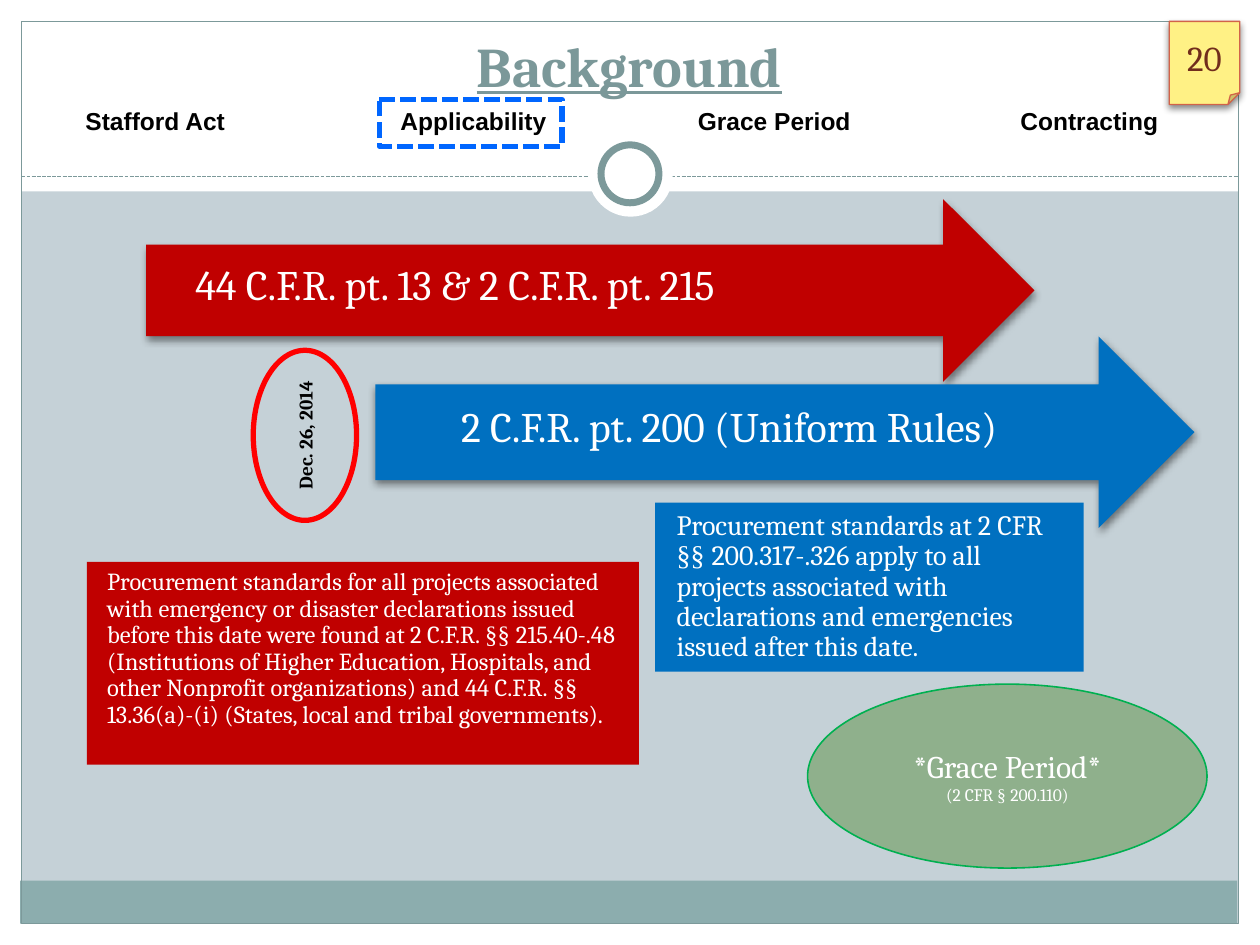
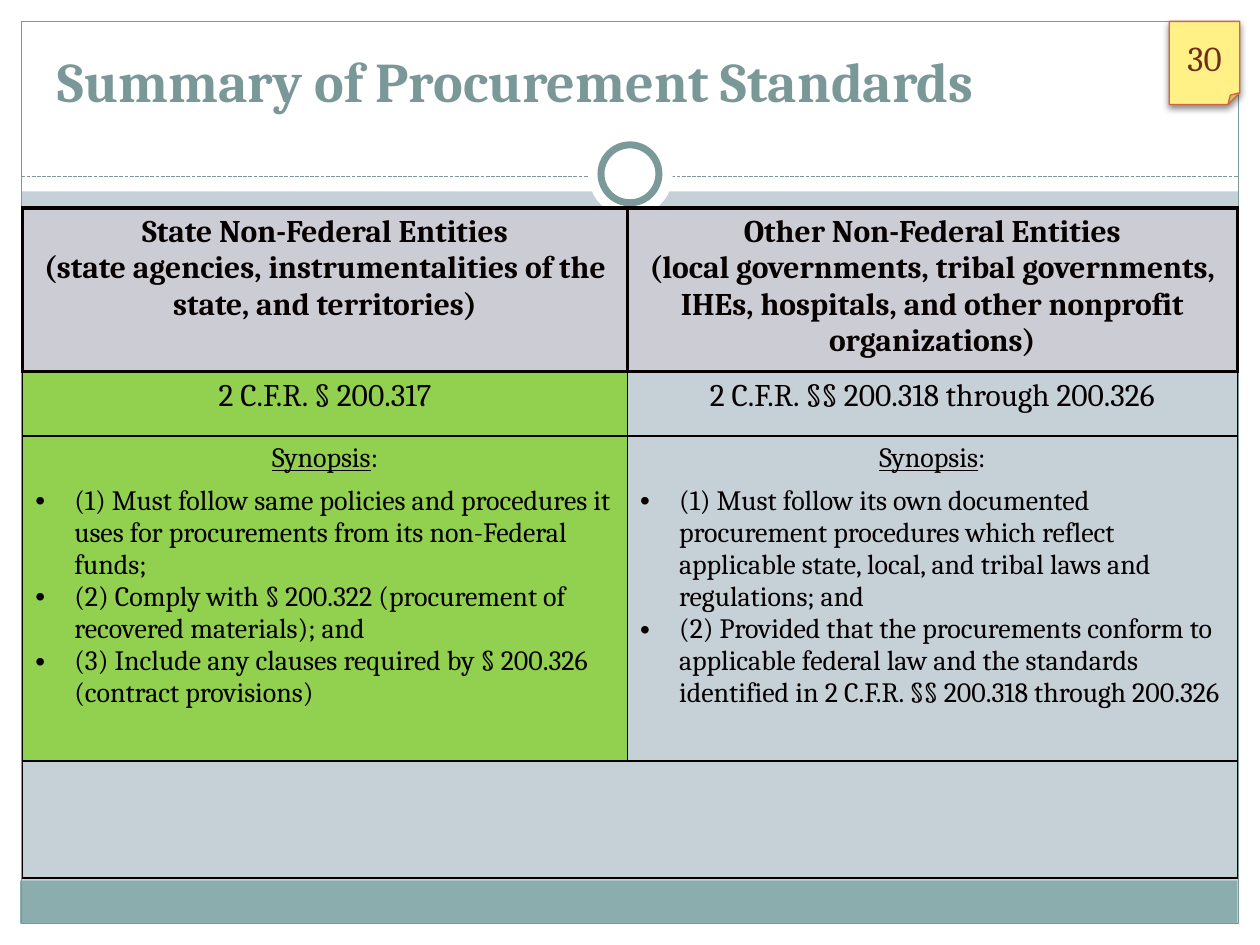
from lxml import etree
from pptx import Presentation
from pptx.dml.color import RGBColor
from pptx.enum import dml, shapes, text
from pptx.oxml import parse_xml
from pptx.oxml.ns import nsdecls, qn
from pptx.util import Pt

SCALE = 9144  # EMU per px, 100 px to the inch
WHITE = RGBColor(0xFF, 0xFF, 0xFF)
BLACK = RGBColor(0x00, 0x00, 0x00)
BACKGROUND = RGBColor(0xC5, 0xD1, 0xD7)
BAND = RGBColor(0x8C, 0xAD, 0xAE)
FRAME = RGBColor(0x7C, 0x99, 0x9A)
TITLE = RGBColor(0x7B, 0x98, 0x99)
NOTE = RGBColor(0xFF, 0xF1, 0x85)
NOTE_EDGE = RGBColor(0xD1, 0x63, 0x49)
NOTE_TEXT = RGBColor(0x71, 0x2D, 0x1C)
DARK_RED = RGBColor(0xC0, 0x00, 0x00)
RED = RGBColor(0xFF, 0x00, 0x00)
BLUE = RGBColor(0x00, 0x70, 0xC0)
HIGHLIGHT = RGBColor(0x00, 0x66, 0xFF)
SAGE = RGBColor(0x8F, 0xB0, 0x8C)
GREEN = RGBColor(0x00, 0xB0, 0x50)
LIME = RGBColor(0x92, 0xD0, 0x50)
HEADER = RGBColor(0xCC, 0xCC, 0xD4)
INK = RGBColor(0x07, 0x00, 0x00)

SHAPE = shapes.MSO_SHAPE
DASH = dml.MSO_LINE.SQUARE_DOT
LEFT, CENTER = text.PP_ALIGN.LEFT, text.PP_ALIGN.CENTER
MIDDLE = text.MSO_ANCHOR.MIDDLE


def draw(slide, kind, box, fill=None, line=None, width=0.75, shadow=False):
    shape = slide.shapes.add_shape(kind, *[value * SCALE for value in box])
    shape.shadow.inherit = False
    if shadow:
        shape.element.spPr.find(qn("a:effectLst")).append(parse_xml(
            f'<a:outerShdw {nsdecls("a")} blurRad="50800" dist="25400" dir="5400000" rotWithShape="0">'
            '<a:srgbClr val="000000"><a:alpha val="45000"/></a:srgbClr></a:outerShdw>'))
    if fill is None:
        shape.fill.background()
    else:
        shape.fill.solid()
        shape.fill.fore_color.rgb = fill
    if line is None:
        shape.line.fill.background()
    else:
        shape.line.color.rgb = line
        shape.line.width = Pt(width)
    shape.text_frame.word_wrap = True
    return shape


def write(paragraph, content, size, color, bold=False, align=CENTER, name="Cambria"):
    """Fill a paragraph; parts between bars are set in Times New Roman."""
    for index, part in enumerate(content.split("|")):
        run = paragraph.add_run()
        run.text = part
        if index % 2:
            run.font.name = "Times New Roman"
    paragraph.alignment = align
    font = paragraph.font
    font.name, font.size, font.bold = name, Pt(size), bold
    font.color.rgb = color


presentation = Presentation()
presentation.slide_width, presentation.slide_height = 1000 * SCALE, 750 * SCALE

# Frame, page note and title of every slide
pages = [
    ("Background", "20", (33, 0, 933, 83), CENTER),
    ("Summary of Procurement Standards", "30", (36, 19, 878, 76), LEFT),
]
slides = []
for heading, number, title_box, align in pages:
    slide = presentation.slides.add_slide(presentation.slide_layouts[5])
    slides.append(slide)
    slide.background.fill.solid()
    slide.background.fill.fore_color.rgb = BACKGROUND
    for margin in [(0, 733, 1000, 17), (0, 0, 1000, 152), (0, 0, 17, 750), (983, 0, 17, 750)]:
        draw(slide, SHAPE.RECTANGLE, margin, WHITE)
    draw(slide, SHAPE.RECTANGLE, (16, 699, 966, 34), BAND)
    draw(slide, SHAPE.RECTANGLE, (17, 17, 966, 716), line=FRAME)
    rule = slide.shapes.add_connector(
        shapes.MSO_CONNECTOR.STRAIGHT, 17 * SCALE, 140 * SCALE, 983 * SCALE, 140 * SCALE)
    rule.line.color.rgb, rule.line.width, rule.line.dash_style = FRAME, Pt(0.75), DASH
    etree.SubElement(rule.element.spPr, qn("a:effectLst"))
    draw(slide, SHAPE.OVAL, (467, 105, 67, 67), WHITE)
    draw(slide, SHAPE.OVAL, (477, 115, 46, 46), WHITE, FRAME, 4)
    note = draw(slide, SHAPE.FOLDED_CORNER, (928, 17, 56, 66), NOTE, NOTE_EDGE, shadow=True)
    note.text_frame.vertical_anchor = MIDDLE
    write(note.text_frame.paragraphs[0], number, 20, NOTE_TEXT)

    title = slide.shapes.title
    title.left, title.top, title.width, title.height = [value * SCALE for value in title_box]
    title.text_frame.vertical_anchor = text.MSO_ANCHOR.BOTTOM
    write(title.text_frame.paragraphs[0], heading, 32, TITLE, True, align)
    title.element.getparent().append(title.element)  # bring in front of the bands

background, summary = slides

# Background: section names and the current section
background.shapes.title.text_frame.paragraphs[0].font.underline = True
sections = background.shapes.add_textbox(58 * SCALE, 79 * SCALE, 899 * SCALE, 34 * SCALE)
sections.text_frame.word_wrap = True
paragraph = sections.text_frame.paragraphs[0]
tabs = etree.SubElement(paragraph._p.get_or_add_pPr(), qn("a:tabLst"))
for position in (250, 486, 742):
    etree.SubElement(tabs, qn("a:tab"), pos=str(position * SCALE), algn="l")
write(paragraph, "Stafford Act\tApplicability\tGrace Period\tContracting", 14, BLACK, True, LEFT, "Arial")
current = draw(background, SHAPE.ROUNDED_RECTANGLE, (301, 79, 145, 37), line=HIGHLIGHT, width=3)
current.adjustments[0] = 0
current.line.dash_style = DASH

# Background: arrows and their explanations
# kind, box, fill, text, size, margins (left, top, right, bottom)
rules = [
    (SHAPE.RIGHT_ARROW, (116, 158, 705, 145), DARK_RED,
     "44 C.F.R. pt. 13 & 2 C.F.R. pt. 215", 24, (39, 10, 28, 16)),
    (SHAPE.RECTANGLE, (69, 446, 438, 161), DARK_RED,
     "Procurement standards for all projects associated with emergency or disaster declarations "
     "issued before this date were found at 2 C.F.R. |§§ |215.40-.48 (Institutions of Higher "
     "Education, Hospitals, and other Nonprofit organizations) and 44 C.F.R. |§§ |13.36(a)-(i) "
     "(States, local and tribal governments).", 14, (16, 6, 6, 6)),
    (SHAPE.RIGHT_ARROW, (298, 267, 650, 152), BLUE,
     "2 C.F.R. pt. 200 (Uniform Rules)", 24, (68, 10, 28, 16)),
    (SHAPE.RECTANGLE, (520, 399, 340, 134), BLUE,
     "Procurement standards at 2 CFR |§§ |200.317-.326 apply to all projects associated with "
     "declarations and emergencies issued after this date.", 16, (17, 7, 7, 7)),
]
for kind, box, fill, content, size, margins in rules:
    is_arrow = kind == SHAPE.RIGHT_ARROW
    frame = draw(background, kind, box, fill, shadow=is_arrow).text_frame
    frame.margin_left, frame.margin_top, frame.margin_right, frame.margin_bottom = [
        value * SCALE for value in margins]
    frame.vertical_anchor = MIDDLE if is_arrow else text.MSO_ANCHOR.TOP
    frame.paragraphs[0].line_spacing = 0.9
    write(frame.paragraphs[0], content, size, WHITE, align=LEFT)

frame = draw(background, SHAPE.OVAL, (641, 543, 317, 146), SAGE, GREEN, 0.9).text_frame
frame.vertical_anchor = MIDDLE
write(frame.paragraphs[0], "*Grace Period*", 18, WHITE)
write(frame.add_paragraph(), "(2 CFR |§ |200.110)", 10, WHITE)

frame = draw(background, SHAPE.OVAL, (201, 278, 82, 135), line=RED, width=3).text_frame
frame.margin_left = frame.margin_top = frame.margin_right = frame.margin_bottom = 0
frame.vertical_anchor = MIDDLE
frame.word_wrap = False
frame._txBody.bodyPr.set("vert", "vert270")
write(frame.paragraphs[0], "Dec. 26, 2014", 11, BLACK, True)

# Summary: one column for each kind of entity
entities = [
    (480, LIME, "State Non-Federal Entities",
     "(state agencies, instrumentalities of the state, and territories)",
     "2 C.F.R. § 200.317",
     ["(1) Must follow same policies and procedures it uses for procurements from its non-Federal funds;",
      "(2) Comply with § 200.322 (procurement of recovered materials); and",
      "(3) Include any clauses required by § 200.326 (contract provisions)"]),
    (484, None, "Other Non-Federal Entities",
     "(local governments, tribal governments, IHEs, hospitals, and other nonprofit organizations)",
     "2 C.F.R. §§ 200.318 through 200.326",
     ["(1) Must follow its own documented procurement procedures which reflect applicable state, "
      "local, and tribal laws and regulations; and",
      "(2) Provided that the procurements conform to applicable federal law and the standards "
      "identified in 2 C.F.R. §§ 200.318 through 200.326"]),
]
row_heights = [130, 51, 258, 93]
table = summary.shapes.add_table(
    len(row_heights), len(entities), 18 * SCALE, 165 * SCALE, 964 * SCALE, sum(row_heights) * SCALE).table
table.first_row = table.horz_banding = False
for row, height in zip(table.rows, row_heights):
    row.height = height * SCALE

for column, (width, fill, entity, members, citation, duties) in enumerate(entities):
    table.columns[column].width = width * SCALE
    header, source, synopsis = [table.cell(row, column).text_frame for row in range(3)]
    write(header.paragraphs[0], entity, 18, INK, True)
    write(header.add_paragraph(), members, 18, INK, True)
    write(source.paragraphs[0], citation, 18, INK)
    paragraph = synopsis.paragraphs[0]
    paragraph.space_after = Pt(6)
    write(paragraph, "Synopsis", 16, INK)
    paragraph.runs[0].font.underline = True
    paragraph.add_run().text = ":"
    for duty in duties:
        paragraph = synopsis.add_paragraph()
        properties = paragraph._p.get_or_add_pPr()
        properties.set("marL", str(31 * SCALE))
        properties.set("indent", str(-31 * SCALE))
        etree.SubElement(properties, qn("a:buFont"), typeface="Arial")
        etree.SubElement(properties, qn("a:buChar"), char="•")
        write(paragraph, duty, 16, INK, align=LEFT)

    for row, cell_fill in enumerate([HEADER, fill, fill, None]):
        cell = table.cell(row, column)
        if cell_fill is None:
            cell.fill.background()
        else:
            cell.fill.solid()
            cell.fill.fore_color.rgb = cell_fill
        for index, side in enumerate(["lnL", "lnR", "lnT", "lnB"]):
            is_thick = row == 0 or (row == 1 and side == "lnT")
            cell._tc.get_or_add_tcPr().insert(index, parse_xml(
                f'<a:{side} {nsdecls("a")} w="{Pt(2.25 if is_thick else 1)}">'
                f'<a:solidFill><a:srgbClr val="{INK}"/></a:solidFill></a:{side}>'))
table.cell(3, 0).merge(table.cell(3, 1))

presentation.save("out.pptx")
